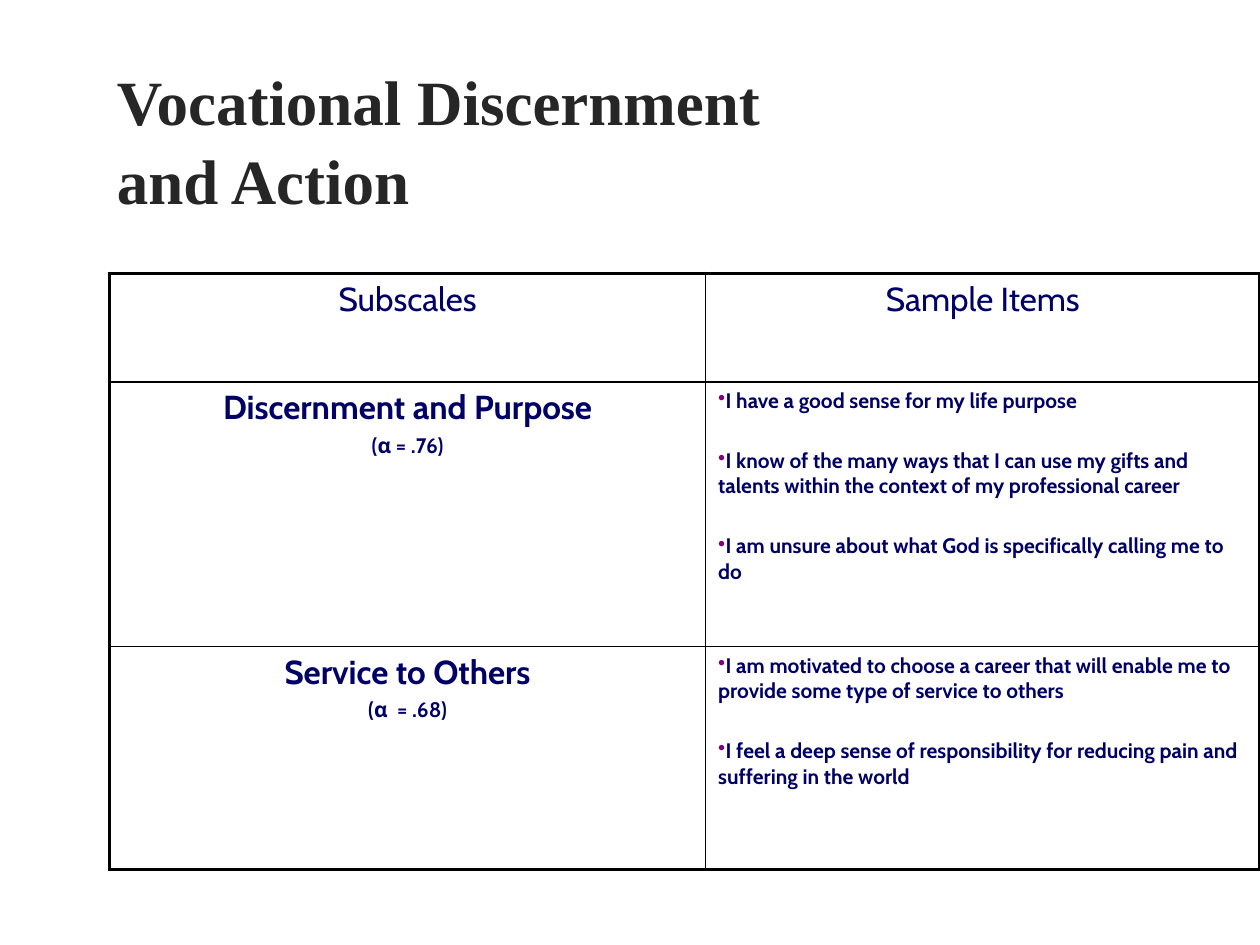
import pptx
import pptx.dml.color
import pptx.enum.text
import pptx.oxml.ns
import pptx.util
from lxml import etree
from pptx.util import Inches

COLORS = {"title": "262626", "text": "000066", "bullet": "800080", "border": "000000"}
TITLE_FONT, TABLE_FONT = "Times New Roman", "Cabin"
OUTER_WIDTH, INNER_WIDTH = 2.25, 1
HEADING_SIZE, BODY_SIZE = 19, 12

COLUMN_WIDTHS = [4.73, 4.4]
ROW_HEIGHTS = [0.86, 2.1, 1.77]
HEADERS = ["Subscales", "Sample Items"]
SUBSCALES = [
    ("Discernment and Purpose", "(α = .76)", [
        "I have a good sense for my life purpose",
        "I know of the many ways that I can use my gifts and talents "
        "within the context of my professional career",
        "I am unsure about what God is specifically calling me to do",
    ]),
    ("Service to Others", "(α  = .68)", [
        "I am motivated to choose a career that will enable me to "
        "provide some type of service to others",
        "I feel a deep sense of responsibility for reducing pain and "
        "suffering in the world",
    ]),
]


def add_element(parent, tag, **attributes):
    return etree.SubElement(parent, pptx.oxml.ns.qn(tag), **attributes)


def style_runs(paragraph, font_name, size, color, bold):
    for run in paragraph.runs:
        run.font.name = font_name
        run.font.size = pptx.util.Pt(size)
        run.font.bold = bold
        run.font.color.rgb = pptx.dml.color.RGBColor.from_string(COLORS[color])


def add_title(slide, left, top, width, height):
    text_frame = slide.shapes.add_textbox(left, top, width, height).text_frame
    text_frame.word_wrap = True
    text_frame.vertical_anchor = pptx.enum.text.MSO_ANCHOR.MIDDLE
    text_frame.text = "Vocational Discernment\vand Action"
    paragraph = text_frame.paragraphs[0]
    paragraph.line_spacing = 1.05
    style_runs(paragraph, TITLE_FONT, 36, "title", True)


def set_borders(cell, widths):
    """Draw the left, right, top and bottom borders, with widths in points."""
    properties = cell._tc.get_or_add_tcPr()
    for side, width in zip("LRTB", widths):
        line = add_element(properties, f"a:ln{side}", w=str(pptx.util.Pt(width)))
        fill = add_element(line, "a:solidFill")
        add_element(fill, "a:srgbClr", val=COLORS["border"])


def add_bullet(paragraph):
    properties = paragraph._p.get_or_add_pPr()
    properties.set("marL", "0")
    properties.set("indent", "0")
    color = add_element(properties, "a:buClr")
    add_element(color, "a:srgbClr", val=COLORS["bullet"])
    add_element(properties, "a:buChar", char="•")


def fill_cell(cell, lines, sizes, bold=True, gap=2.4, bulleted=False):
    text_frame = cell.text_frame
    text_frame.text = "\n".join(lines)
    for index, (paragraph, size) in enumerate(zip(text_frame.paragraphs, sizes)):
        if index:
            paragraph.space_before = pptx.util.Pt(gap)
        if bulleted:
            add_bullet(paragraph)
        else:
            paragraph.alignment = pptx.enum.text.PP_ALIGN.CENTER
        style_runs(paragraph, TABLE_FONT, size, "text", bold)


def add_subscale_table(slide, left, top, width, height):
    rows, columns = len(ROW_HEIGHTS), len(COLUMN_WIDTHS)
    table = slide.shapes.add_table(rows, columns, left, top, width, height).table
    table.first_row = table.horz_banding = False
    for column, share in zip(table.columns, COLUMN_WIDTHS):
        column.width = int(width * share / sum(COLUMN_WIDTHS))
    for row, share in zip(table.rows, ROW_HEIGHTS):
        row.height = int(height * share / sum(ROW_HEIGHTS))

    for row in range(rows):
        for column in range(columns):
            cell = table.cell(row, column)
            on_edge = (column == 0, column == columns - 1, row == 0, row == rows - 1)
            set_borders(cell, [OUTER_WIDTH if edge else INNER_WIDTH for edge in on_edge])
            cell.fill.background()

    for column, header in enumerate(HEADERS):
        fill_cell(table.cell(0, column), [header], [HEADING_SIZE], bold=False)
    for row, (name, alpha, items) in enumerate(SUBSCALES, start=1):
        fill_cell(table.cell(row, 0), [name, alpha], [HEADING_SIZE, BODY_SIZE])
        fill_cell(table.cell(row, 1), items, [BODY_SIZE] * len(items),
                  gap=19.5, bulleted=True)


def main():
    presentation = pptx.Presentation()
    presentation.slide_width = Inches(10)
    presentation.slide_height = Inches(7.5)
    slide = presentation.slides.add_slide(presentation.slide_layouts[6])
    add_title(slide, Inches(0.83), Inches(0.66), Inches(8.6), Inches(0.87))
    add_subscale_table(slide, Inches(0.87), Inches(2.17), Inches(9.13), Inches(4.73))
    presentation.save("out.pptx")


if __name__ == "__main__":
    main()
